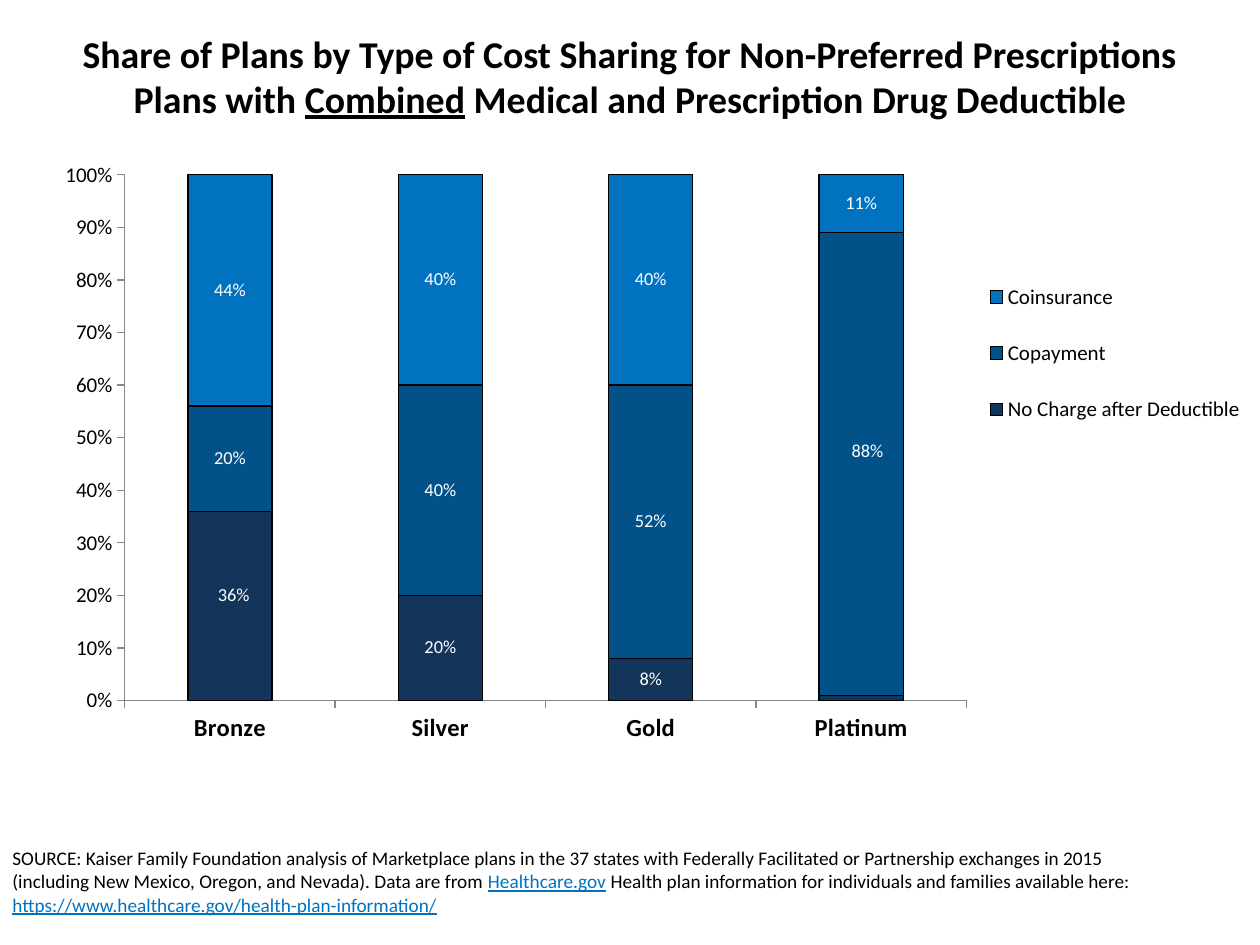
from pptx import Presentation
from pptx.chart.data import CategoryChartData
from pptx.dml.color import RGBColor
from pptx.enum.chart import XL_CHART_TYPE, XL_LEGEND_POSITION, XL_TICK_MARK
from pptx.enum.text import MSO_ANCHOR, PP_ALIGN
from pptx.oxml import parse_xml
from pptx.oxml.ns import nsdecls
from pptx.util import Inches, Pt

STACKED = XL_CHART_TYPE.COLUMN_STACKED_100
RIGHT = XL_LEGEND_POSITION.RIGHT
OUT, NONE = XL_TICK_MARK.OUTSIDE, XL_TICK_MARK.NONE
MIDDLE, CENTER = MSO_ANCHOR.MIDDLE, PP_ALIGN.CENTER
FONT, BLACK, WHITE, BLUE, GRAY = "Calibri", "000000", "FFFFFF", "0072C0", "868686"


def color(code):
    return RGBColor.from_string(code)


def write(par, text, size, hue=BLACK, bold=False, under=False):
    run = par.add_run()
    run.text = text
    font = run.font
    font.name, font.size = FONT, Pt(size)
    font.bold, font.underline = bold, under
    font.color.rgb = color(hue)


prs = Presentation()
prs.slide_width, prs.slide_height = Inches(10), Inches(7.5)
slide = prs.slides.add_slide(prs.slide_layouts[6])

# Source note
note = slide.shapes.add_textbox(Inches(0), Inches(6.67), Inches(9.25), Inches(0.84))
note.text_frame.word_wrap = True
par = note.text_frame.paragraphs[0]
write(par, "SOURCE: Kaiser Family Foundation analysis of Marketplace plans in the 37 states "
      "with Federally Facilitated or Partnership exchanges in 2015 (including New Mexico, "
      "Oregon, and Nevada). Data are from ", 11)
write(par, "Healthcare.gov", 11, hue=BLUE, under=True)
write(par, " Health plan information for individuals and families available here: ", 11)
write(par, "https://www.healthcare.gov/health-plan-information/", 11, hue=BLUE, under=True)

# Title
title = slide.shapes.add_textbox(Inches(0.1), Inches(0.1), Inches(9.8), Inches(1))
title.text_frame.word_wrap = True
title.text_frame.vertical_anchor = MIDDLE
par = title.text_frame.paragraphs[0]
par.alignment = CENTER
write(par, "Share of Plans by Type of Cost Sharing for Non-Preferred Prescriptions", 21.6, bold=True)
par.add_line_break()
write(par, "Plans with ", 21.6, bold=True)
write(par, "Combined", 21.6, bold=True, under=True)
write(par, " Medical and Prescription Drug Deductible", 21.6, bold=True)

# Chart data
data = CategoryChartData(number_format="0%")
data.categories = ["Bronze", "Silver", "Gold", "Platinum"]
data.add_series("No Charge after Deductible", [0.36, 0.2, 0.08, 0.01])
data.add_series("Copayment", [0.2, 0.4, 0.52, 0.88])
data.add_series("Coinsurance", [0.44, 0.4, 0.4, 0.11])
chart = slide.shapes.add_chart(
    STACKED, Inches(0), Inches(1.17), Inches(10), Inches(4.95), data).chart
chart.has_title = False
chart.font.name, chart.font.size = FONT, Pt(12)
chart.font.color.rgb = color(BLACK)

# Axes
for axis in (chart.category_axis, chart.value_axis):
    axis.has_major_gridlines = False
    axis.major_tick_mark, axis.minor_tick_mark = OUT, NONE
    axis.format.line.color.rgb = color(GRAY)
    axis.format.line.width = Pt(0.75)
cats = chart.category_axis.tick_labels.font
cats.name, cats.size, cats.bold = FONT, Pt(14), True
cats.color.rgb = color(BLACK)
scale = chart.value_axis
scale.minimum_scale, scale.maximum_scale, scale.major_unit = 0, 1, 0.1
scale.tick_labels.number_format = "0%"
scale.tick_labels.number_format_is_linked = False

# Columns and their labels
plot = chart.plots[0]
plot.gap_width, plot.overlap = 150, 100
plot.vary_by_categories = False
for series, hue in zip(plot.series, ("133559", "025189", BLUE)):
    series.format.fill.solid()
    series.format.fill.fore_color.rgb = color(hue)
    series.format.line.color.rgb = color(BLACK)
    series.format.line.width = Pt(0.75)
    labels = series.data_labels
    labels.show_value = True
    labels.number_format, labels.number_format_is_linked = "0%", False
    labels.font.name, labels.font.size = FONT, Pt(10.5)
    labels.font.color.rgb = color(WHITE)

# Two labels sit slightly off center, and the 1% label is off
for row, col, left, top in ((0, 0, 0.003, -0.016), (1, 3, 0.005, -0.02)):
    label = plot.series[row].points[col].data_label
    label.font.name, label.font.size = FONT, Pt(10.5)
    label.font.color.rgb = color(WHITE)
    item = plot.series[row].data_labels._element.find("{*}dLbl")
    item.insert(1, parse_xml(
        f'<c:layout {nsdecls("c")}><c:manualLayout><c:x val="{left}"/>'
        f'<c:y val="{top}"/></c:manualLayout></c:layout>'))
plot.series[0].data_labels._element.insert(1, parse_xml(
    f'<c:dLbl {nsdecls("c")}><c:idx val="3"/><c:delete val="1"/></c:dLbl>'))

# Legend
chart.has_legend = True
legend = chart.legend
legend.position, legend.include_in_layout = RIGHT, False
legend.font.name, legend.font.size = FONT, Pt(12)
legend.font.color.rgb = color(BLACK)

# Fixed places for plot and legend
area = chart._chartSpace.chart.plotArea
for part, spot, inner, frame in (
        (area, 0, '<c:layoutTarget val="inner"/>', (0.099, 0.044, 0.668, 0.843)),
        (legend._element, 1, "", (0.77, 0.17, 0.23, 0.32))):
    for old in part.findall("{*}layout"):
        part.remove(old)
    x, y, w, h = frame
    part.insert(spot, parse_xml(
        f'<c:layout {nsdecls("c")}><c:manualLayout>{inner}'
        f'<c:xMode val="edge"/><c:yMode val="edge"/><c:x val="{x}"/><c:y val="{y}"/>'
        f'<c:w val="{w}"/><c:h val="{h}"/></c:manualLayout></c:layout>'))

prs.save("out.pptx")
